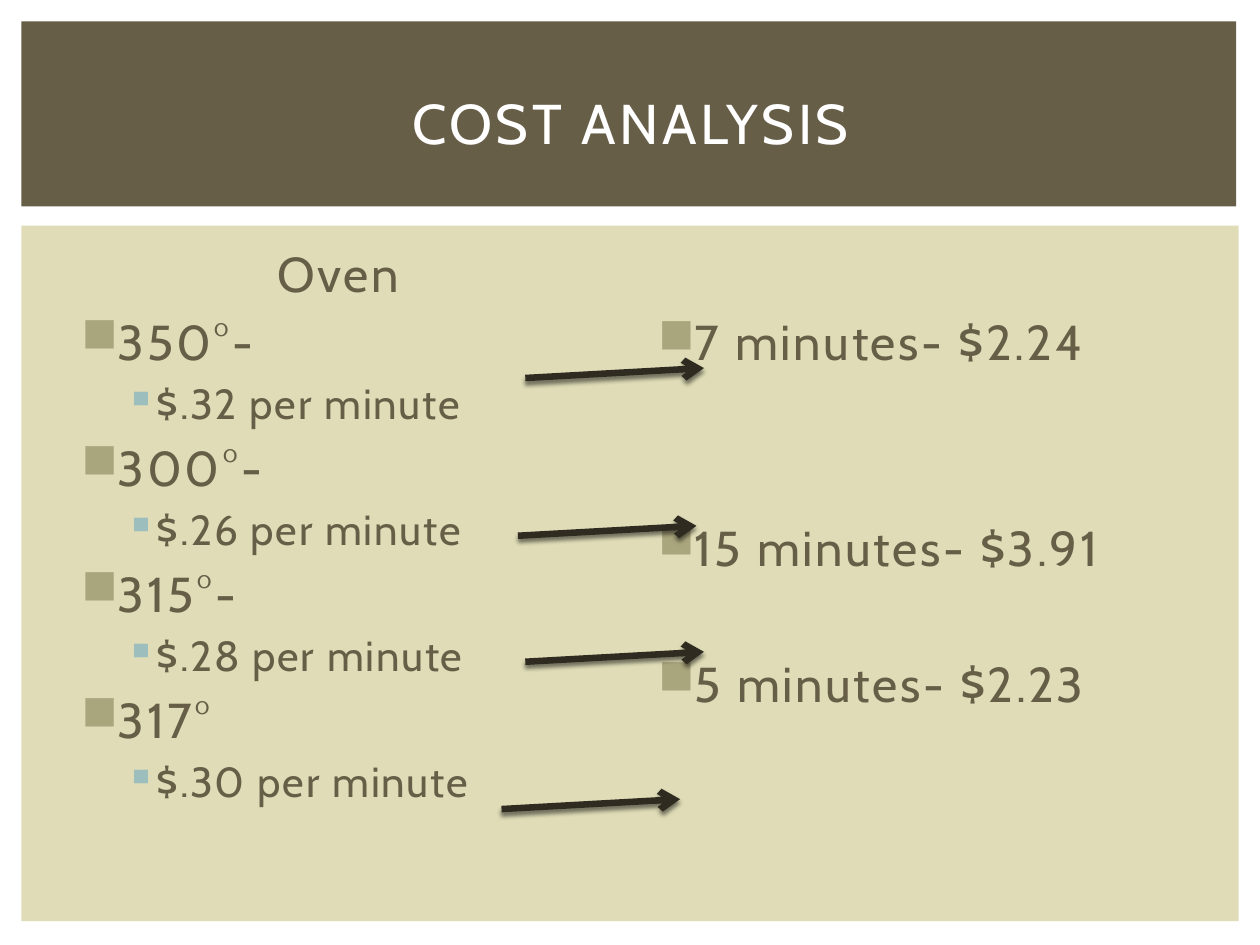
from lxml import etree
from pptx import Presentation
from pptx import util as u
from pptx.dml.color import RGBColor
from pptx.enum import shapes, text
from pptx.oxml import ns

BROWN = RGBColor(0x67, 0x5E, 0x47)
CREAM = RGBColor(0xDF, 0xDC, 0xB7)
WHITE = RGBColor(0xFF, 0xFF, 0xFF)
INK = RGBColor(0x2F, 0x2B, 0x20)
BLACK = RGBColor(0, 0, 0)
OLIVE = RGBColor(0xA9, 0xA5, 0x7C)
TEAL = RGBColor(0x9C, 0xBE, 0xBD)

# Paragraph levels: size, letter spacing, space before (pt), indents (cm), bullet
HEADING = dict(size=28, spacing=1.5, left=0.13, align=text.PP_ALIGN.CENTER)
ITEM = dict(size=28, spacing=1.5, before=5.2, left=0.76, hanging=-0.64,
            bullet="■", bullet_color=OLIVE)
DETAIL = dict(size=24, spacing=1, before=4.4, left=1.52, hanging=-0.51,
              bullet="▪", bullet_color=TEAL, level=1)
LINE_PITCH = 39.2  # points from one 28 pt line to the next


def add_element(parent, tag, **attributes):
    element = etree.SubElement(parent, ns.qn(tag))
    for name, value in attributes.items():
        element.set(name, str(value))
    return element


class SlideWriter:
    font = "Cabin"

    def __init__(self, presentation):
        self.slide = presentation.slides.add_slide(presentation.slide_layouts[6])

    def panel(self, left, top, width, height, color):
        shape = self.slide.shapes.add_shape(
            shapes.MSO_SHAPE.RECTANGLE,
            u.Cm(left), u.Cm(top), u.Cm(width), u.Cm(height))
        shape.shadow.inherit = False
        shape.fill.solid()
        shape.fill.fore_color.rgb = color
        shape.line.fill.background()

    def text_box(self, left, top, width, height, margin_top=0.13,
                 anchor=text.MSO_ANCHOR.TOP):
        shape = self.slide.shapes.add_textbox(
            u.Cm(left), u.Cm(top), u.Cm(width), u.Cm(height))
        frame = shape.text_frame
        frame.word_wrap = True
        frame.margin_top = u.Cm(margin_top)
        frame.vertical_anchor = anchor
        return frame

    def paragraph(self, frame, words, size, spacing, before=0, left=0, hanging=0,
                  bullet=None, bullet_color=None, level=0,
                  align=text.PP_ALIGN.LEFT, color=BROWN):
        paragraph = frame.paragraphs[0]
        if paragraph.runs:
            paragraph = frame.add_paragraph()
        paragraph.alignment = align
        paragraph.level = level
        paragraph.space_before = u.Pt(before)
        properties = paragraph._p.get_or_add_pPr()
        properties.set("marL", str(u.Cm(left)))
        properties.set("indent", str(u.Cm(hanging)))
        if bullet:
            bullet_fill = add_element(properties, "a:buClr")
            add_element(bullet_fill, "a:srgbClr", val=bullet_color)
            add_element(properties, "a:buChar", char=bullet)
        run = paragraph.add_run()
        run.text = words
        run.font.name = self.font
        run.font.size = u.Pt(size)
        run.font.color.rgb = color
        run._r.get_or_add_rPr().set("spc", str(int(spacing * 100)))

    def arrow(self, left, top, run=3.6, rise=0.2):
        connector = self.slide.shapes.add_connector(
            shapes.MSO_CONNECTOR.STRAIGHT,
            u.Cm(left), u.Cm(top), u.Cm(left + run), u.Cm(top - rise))
        connector.line.color.rgb = INK
        connector.line.width = u.Pt(3.75)
        add_element(connector.line._get_or_add_ln(), "a:tailEnd", type="arrow")
        effects = add_element(connector._element.spPr, "a:effectLst")
        shadow = add_element(effects, "a:outerShdw", blurRad=u.Pt(2.5),
                             dist=u.Pt(2), dir=90 * 60000, rotWithShape=0)
        shade = add_element(shadow, "a:srgbClr", val=BLACK)
        add_element(shade, "a:alpha", val=50000)


def main():
    presentation = Presentation()
    presentation.slide_width = u.Cm(25.4)
    presentation.slide_height = u.Cm(19.05)
    writer = SlideWriter(presentation)

    # Background panels
    writer.panel(0.43, 4.55, 24.54, 14.02, CREAM)
    writer.panel(0.43, 0.43, 24.49, 3.73, BROWN)

    # Oven temperatures and their rates
    oven = writer.text_box(1.27, 4.78, 11.23, 12.24)
    writer.paragraph(oven, "Oven ", **HEADING)
    for temperature, rate in (("350°-", "$.32"), ("300°-", "$.26"),
                              ("315°-", "$.28"), ("317°", "$.30")):
        writer.paragraph(oven, temperature, **ITEM)
        writer.paragraph(oven, f"{rate} per minute", **DETAIL)

    # Baking times and costs, starting one line down
    costs = writer.text_box(12.9, 4.78, 11.23, 12.24, margin_top=1.51)
    for words, skipped_lines in (("7 minutes- $2.24", 0), ("15 minutes- $3.91", 2),
                                 ("5 minutes- $2.23", 1)):
        before = ITEM["before"] + skipped_lines * LINE_PITCH if skipped_lines else 0
        writer.paragraph(costs, words, **{**ITEM, "before": before})

    # Title
    title = writer.text_box(1.07, 0.99, 23.29, 2.92, anchor=text.MSO_ANCHOR.MIDDLE)
    writer.paragraph(title, "COST ANALYSIS", size=32, spacing=2,
                     align=text.PP_ALIGN.CENTER, color=WHITE)

    # Arrows from rate to cost
    for left, top in ((10.59, 7.62), (10.44, 10.8), (10.59, 13.34), (10.11, 16.31)):
        writer.arrow(left, top)

    presentation.save("out.pptx")


if __name__ == "__main__":
    main()
